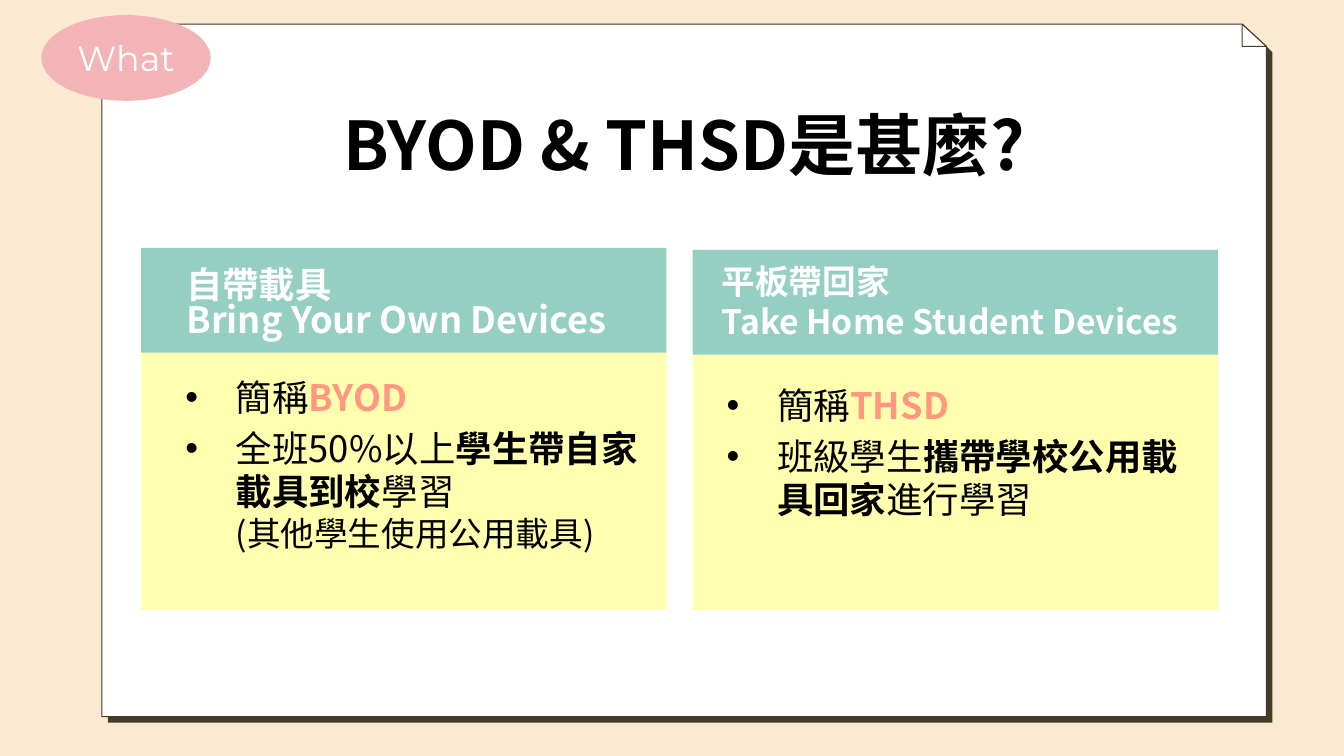
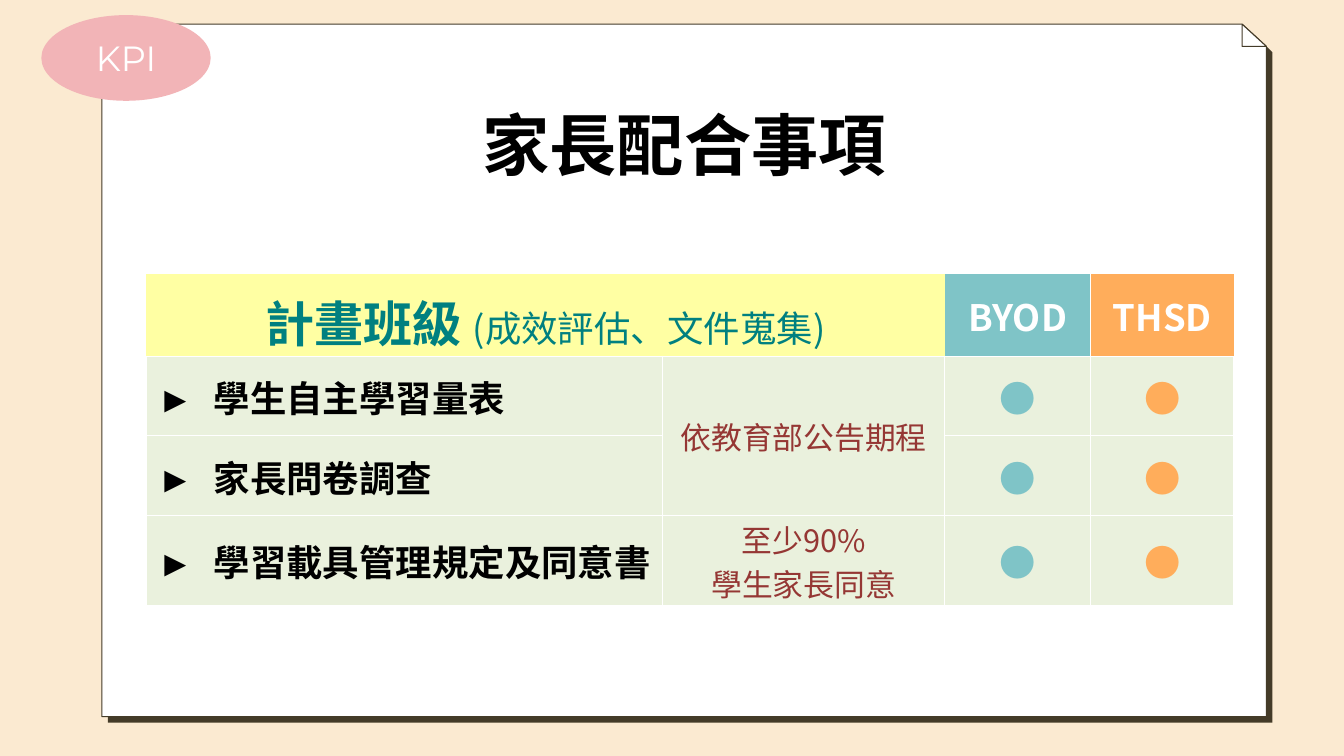
import dataclasses

import lxml.etree
import pptx
import pptx.dml.color
import pptx.enum.shapes
import pptx.enum.text
import pptx.oxml.ns
import pptx.util

Inches = pptx.util.Inches
Pt = pptx.util.Pt
Align = pptx.enum.text.PP_ALIGN
Anchor = pptx.enum.text.MSO_ANCHOR
Preset = pptx.enum.shapes.MSO_SHAPE


@dataclasses.dataclass(frozen=True)
class Theme:
    backdrop: str = "FBEAD1"
    ink: str = "443B28"
    white: str = "FFFFFF"
    black: str = "000000"
    badge: str = "F2B4B7"
    panel_head: str = "95CFC1"
    panel_body: str = "FFFFAF"
    accent: str = "FF9880"
    plan_fill: str = "FFFFA3"
    plan_text: str = "008080"
    byod: str = "7FC4C7"
    thsd: str = "FFAD5B"
    row_fill: str = "EAF1DD"
    terms: str = "953734"
    font: str = "Noto Sans CJK TC"
    badge_font: str = "Montserrat"
    marker_font: str = "Arial"
    title_size: float = 48
    plan_size: float = 35
    body_size: float = 26
    badge_size: float = 25
    note_size: float = 24
    terms_size: float = 22


THEME = Theme()


def rgb(value):
    return pptx.dml.color.RGBColor.from_string(value)


def add_xml(parent, tag, **attributes):
    return lxml.etree.SubElement(parent, pptx.oxml.ns.qn(tag), attributes)


def style_run(run, size, color, bold, font):
    run.font.size = Pt(size)
    run.font.bold = bold
    run.font.color.rgb = rgb(color)
    run.font.name = font
    add_xml(run.font._element, "a:ea", typeface=font)


def indent(paragraph, left, bullet):
    properties = paragraph._p.get_or_add_pPr()
    properties.set("marL", str(Inches(left)))
    properties.set("indent", str(Inches(-left if bullet else 0)))
    if bullet:
        add_xml(add_xml(properties, "a:buClr"), "a:srgbClr", val=THEME.black)
        add_xml(properties, "a:buFont", typeface=THEME.marker_font)
        add_xml(properties, "a:buChar", char=bullet)


def write(frame, paragraphs, size=THEME.body_size, color=THEME.black, bold=False,
          font=THEME.font, align=Align.LEFT, spacing=None, gap=0, left=0, bullet=None):
    for index, runs in enumerate(paragraphs):
        paragraph = frame.add_paragraph() if index else frame.paragraphs[0]
        paragraph.alignment = align
        paragraph.space_before = Pt(gap if index else 0)
        if spacing:
            paragraph.line_spacing = spacing
        if left:
            indent(paragraph, left, bullet)
        for words, changes in runs:
            look = dict(size=size, color=color, bold=bold, font=font) | changes
            for line, part in enumerate(words.split("\n")):
                if line:
                    paragraph.add_line_break()
                if part:
                    run = paragraph.add_run()
                    run.text = part
                    style_run(run, **look)


def plain(*lines):
    return [[(line, {})] for line in lines]


class Deck:
    def __init__(self, theme):
        self.theme = theme
        self.show = pptx.Presentation()
        self.show.slide_width = Inches(13.33)
        self.show.slide_height = Inches(7.5)
        backdrop = self.show.slide_master.background.fill
        backdrop.solid()
        backdrop.fore_color.rgb = rgb(theme.backdrop)
        self.slide = None

    def start(self, title, badge):
        self.slide = self.show.slides.add_slide(self.show.slide_layouts[5])
        self.paper()
        self.title(title)
        self.badge(badge)

    def paint(self, shape, fill, line=None):
        shape.shadow.inherit = False
        shape.fill.solid()
        shape.fill.fore_color.rgb = rgb(fill)
        if line:
            shape.line.color.rgb = rgb(line)
            shape.line.width = Pt(0.75)
        else:
            shape.line.fill.background()
        return shape

    def outline(self, points, fill, line=None):
        start, *rest = [(Inches(x), Inches(y)) for x, y in points]
        builder = self.slide.shapes.build_freeform(*start)
        builder.add_line_segments(rest, close=True)
        return self.paint(builder.convert_to_shape(), fill, line)

    def block(self, kind, box, fill):
        return self.paint(self.slide.shapes.add_shape(kind, *map(Inches, box)), fill)

    def paper(self):
        left, top, right, bottom, fold, depth = 1.01, 0.24, 12.56, 7.11, 0.22, 0.06
        crease = right - fold - 0.02, top + fold
        corner = [(crease[0], top), (right, crease[1])]
        self.outline([(left + depth, top + fold), (right, crease[1]),
                      (right + depth, crease[1] + depth), (right + depth, bottom + depth),
                      (left + depth, bottom + depth)], self.theme.ink)
        self.outline([(left, top), *corner, (right, bottom), (left, bottom)],
                     self.theme.white, self.theme.ink)
        self.outline([*corner, crease], self.theme.white, self.theme.ink)

    def title(self, words):
        title = self.slide.shapes.title
        self.slide.shapes._spTree.append(title.element)
        title.left, title.top, title.width, title.height = map(Inches, (1.49, 0.67, 10.59, 1.51))
        frame = title.text_frame
        frame.auto_size = pptx.enum.text.MSO_AUTO_SIZE.NONE
        frame.vertical_anchor = Anchor.MIDDLE
        write(frame, plain(words), size=self.theme.title_size, bold=True, align=Align.CENTER)

    def badge(self, word):
        frame = self.block(Preset.OVAL, (0.41, 0.15, 1.68, 0.85), self.theme.badge).text_frame
        frame.vertical_anchor = Anchor.MIDDLE
        write(frame, plain(word), size=self.theme.badge_size, color=self.theme.white,
              font=self.theme.badge_font, align=Align.CENTER)

    def text(self, box, paragraphs, **look):
        frame = self.slide.shapes.add_textbox(*map(Inches, box)).text_frame
        frame.word_wrap = True
        write(frame, paragraphs, **look)

    def panel(self, left, top):
        width, head, bottom = 5.21, 1.04, 6.05
        self.block(Preset.RECTANGLE, (left, top + head, width, bottom - top - head),
                   self.theme.panel_body)
        self.block(Preset.RECTANGLE, (left, top, width, head), self.theme.panel_head)

    def points(self, box, paragraphs):
        self.text(box, paragraphs, gap=5.2, left=0.5, bullet="•")

    def table(self, left, top, widths, heights):
        table = self.slide.shapes.add_table(
            len(heights), len(widths), Inches(left), Inches(top),
            Inches(sum(widths)), Inches(sum(heights))).table
        table.first_row = table.horz_banding = False
        for column, width in zip(table.columns, widths):
            column.width = Inches(width)
        for row, height in zip(table.rows, heights):
            row.height = Inches(height)
        return table

    def cell(self, cell, fill, paragraphs=(), borders="LRTB", **look):
        cell.margin_left = cell.margin_right = cell.margin_top = Inches(0.01)
        cell.margin_bottom = 0
        cell.vertical_anchor = Anchor.MIDDLE
        properties = cell._tc.get_or_add_tcPr()
        for side in "LRTB":
            edge = add_xml(properties, f"a:ln{side}", w=str(Pt(1)))
            if side in borders:
                add_xml(add_xml(edge, "a:solidFill"), "a:srgbClr", val=self.theme.white)
            else:
                add_xml(edge, "a:noFill")
        cell.fill.solid()
        cell.fill.fore_color.rgb = rgb(fill)
        write(cell.text_frame, paragraphs, **look)


def definitions(deck):
    theme = deck.theme
    strong, regular = dict(bold=True), {}
    highlight = dict(bold=True, color=theme.accent)
    deck.start("BYOD & THSD是甚麼?", "What")
    deck.panel(1.4, 2.46)
    deck.panel(6.87, 2.48)
    deck.points((1.74, 3.67, 4.73, 2.17), [
        [("簡稱", regular), ("BYOD", highlight)],
        [("全班50%以上", regular), ("學生帶自家載具到校", strong), ("學習\n", regular),
         ("(其他學生使用公用載具)", dict(size=theme.note_size))]])
    deck.text((1.75, 2.64, 4.72, 0.8), plain("自帶載具", "Bring Your Own Devices"),
              size=25.9, color=theme.white, bold=True, spacing=0.8)
    deck.text((6.86, 2.54, 5.22, 0.96), plain("平板帶回家", "Take Home Student Devices"),
              size=theme.note_size, color=theme.white, bold=True, left=0.2)
    deck.points((7.11, 3.75, 4.73, 1.95), [
        [("簡稱", regular), ("THSD", highlight)],
        [("班級學生", regular), ("攜帶學校公用載具回家", strong), ("進行學習", regular)]])


def parent_duties(deck):
    theme = deck.theme
    deck.start("家長配合事項", "KPI")
    table = deck.table(1.45, 2.72, (5.12, 2.8, 1.45, 1.42), (0.8, 0.79, 0.79, 0.88))
    schemes = (("BYOD", theme.byod, "RB"), ("THSD", theme.thsd, "LB"))
    duties = (("學生自主學習量表", ("依教育部公告期程",)),
              ("家長問卷調查", ()),
              ("學習載具管理規定及同意書", ("至少90%", "學生家長同意")))

    table.cell(0, 0).merge(table.cell(0, 1))
    table.cell(1, 1).merge(table.cell(2, 1))
    deck.cell(table.cell(0, 0), theme.plan_fill,
              [[("計畫班級 ", dict(size=theme.plan_size, bold=True)), ("(成效評估、文件蒐集)", {})]],
              borders="B", color=theme.plan_text, align=Align.CENTER, spacing=1.14)
    deck.cell(table.cell(0, 1), theme.plan_fill, borders="B")
    for column, (scheme, color, borders) in enumerate(schemes, 2):
        deck.cell(table.cell(0, column), color, plain(scheme), borders=borders,
                  color=theme.white, bold=True, align=Align.CENTER)
    for row, (duty, terms) in enumerate(duties, 1):
        deck.cell(table.cell(row, 0), theme.row_fill,
                  [[(" ►  ", dict(font=theme.marker_font)), (duty, {})]], bold=True)
        deck.cell(table.cell(row, 1), theme.row_fill, plain(*terms),
                  size=theme.terms_size, color=theme.terms, align=Align.CENTER)
        for column, (_, color, _) in enumerate(schemes, 2):
            deck.cell(table.cell(row, column), theme.row_fill, plain("●"),
                      color=color, bold=True, align=Align.CENTER)


def main():
    deck = Deck(THEME)
    definitions(deck)
    parent_duties(deck)
    deck.show.save("out.pptx")


if __name__ == "__main__":
    main()
